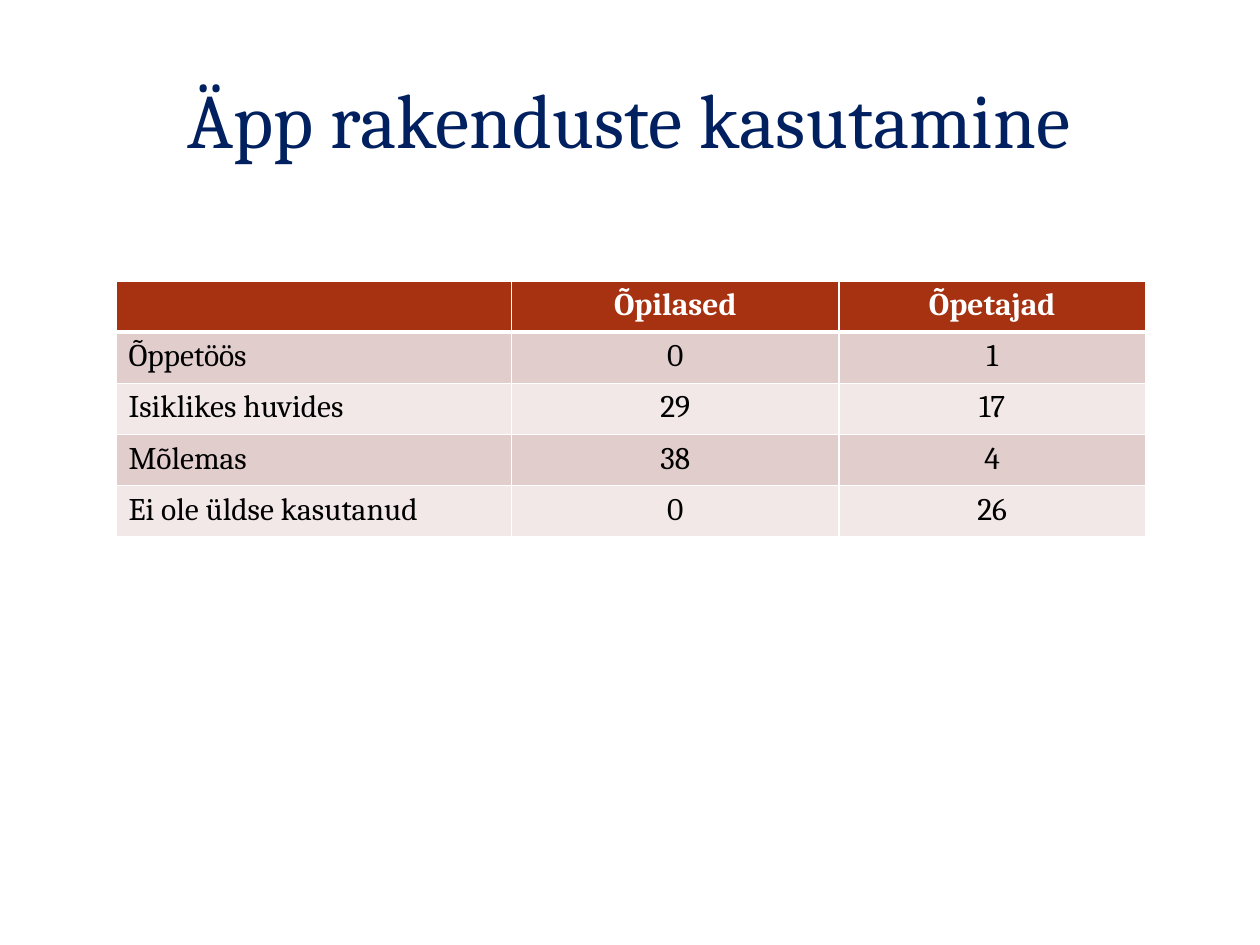
from lxml.etree import SubElement
from pptx import Presentation
from pptx.dml.color import RGBColor
from pptx.enum.text import MSO_ANCHOR, PP_ALIGN
from pptx.oxml.ns import qn
from pptx.util import Inches, Pt

COLORS = {
    "title": "002060",
    "header": "A63212",
    "odd": "E1CECC",
    "even": "F1E8E7",
    "text": "000000",
    "white": "FFFFFF",
}


def style_font(font, color, **values):
    for name, value in {"name": "Cambria", **values}.items():
        setattr(font, name, value)
    font.color.rgb = RGBColor.from_string(COLORS[color])


def add_borders(cell, widths):
    properties = cell._tc.get_or_add_tcPr()
    for side, width in widths.items():
        line = SubElement(properties, qn(f"a:ln{side}"), w=str(Pt(width)))
        fill = SubElement(line, qn("a:solidFill"))
        SubElement(fill, qn("a:srgbClr"), val=COLORS["white"])


presentation = Presentation()
presentation.slide_width, presentation.slide_height = Inches(10), Inches(7.5)
slide = presentation.slides.add_slide(presentation.slide_layouts[5])

# Title
title = slide.shapes.title
title_place = {"left": 0.6, "top": 0.48, "width": 8.79, "height": 0.91}
for side, length in title_place.items():
    setattr(title, side, Inches(length))
title.text_frame.text = "Äpp rakenduste kasutamine"
title.text_frame.vertical_anchor = MSO_ANCHOR.MIDDLE
heading = title.text_frame.paragraphs[0]
heading.alignment = PP_ALIGN.CENTER
style_font(heading.runs[0].font, "title", size=Pt(44))

# Usage table: purpose by group of respondents
usage = [
    ("", "Õpilased", "Õpetajad"),
    ("Õppetöös", "0", "1"),
    ("Isiklikes huvides", "29", "17"),
    ("Mõlemas", "38", "4"),
    ("Ei ole üldse kasutanud", "0", "26"),
]
column_widths = [3.14, 2.6, 2.43]
row_height = 0.406
table = slide.shapes.add_table(
    len(usage), len(column_widths), Inches(0.92), Inches(2.23),
    Inches(sum(column_widths)), Inches(row_height * len(usage)),
).table
for column, width in zip(table.columns, column_widths):
    column.width = Inches(width)

for r, answers in enumerate(usage):
    is_header = r == 0
    band = "header" if is_header else ("even", "odd")[r % 2]
    for c, answer in enumerate(answers):
        cell = table.cell(r, c)
        add_borders(cell, {"L": 1, "R": 1, "T": 3 if r == 1 else 1,
                           "B": 3 if is_header else 1})
        cell.fill.solid()
        cell.fill.fore_color.rgb = RGBColor.from_string(COLORS[band])
        cell.text = answer
        entry = cell.text_frame.paragraphs[0]
        entry.alignment = PP_ALIGN.CENTER if c else PP_ALIGN.LEFT
        style_font(entry.font, "white" if is_header else "text",
                   size=Pt(18), bold=is_header)
        for run in entry.runs:
            style_font(run.font, "white" if is_header else "text",
                       size=Pt(18), bold=is_header)

presentation.save("out.pptx")
